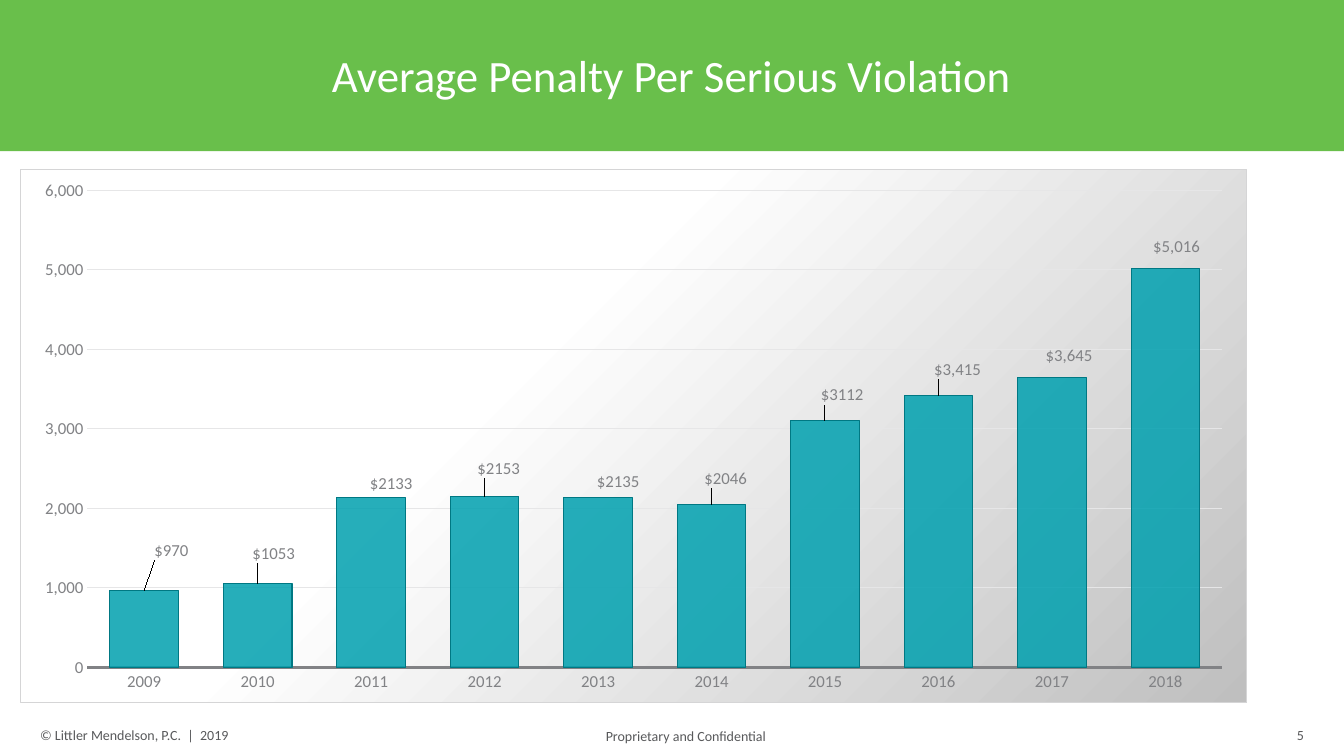
from lxml import etree
from pptx import Presentation
from pptx.chart.data import CategoryChartData
from pptx.dml.color import RGBColor
from pptx.enum.chart import XL_CHART_TYPE, XL_LABEL_POSITION, XL_TICK_MARK
from pptx.enum.shapes import MSO_SHAPE
from pptx.enum.text import MSO_ANCHOR, PP_ALIGN
from pptx.oxml import parse_xml
from pptx.oxml.ns import nsdecls, qn
from pptx.util import Inches, Pt

COLUMN = XL_CHART_TYPE.COLUMN_CLUSTERED
OUTSIDE = XL_LABEL_POSITION.OUTSIDE_END
NO_TICK = XL_TICK_MARK.NONE
MIDDLE = MSO_ANCHOR.MIDDLE
LEFT, CENTER, RIGHT = PP_ALIGN.LEFT, PP_ALIGN.CENTER, PP_ALIGN.RIGHT
FONT = "Calibri"
COLORS = {
    "band": "69BF4B", "white": "FFFFFF", "footer": "58595B", "label": "818285",
    "grid": "E6E6E7", "bar": "00A0AF", "bar_line": "007883",
    "frame": "D5D5D6", "shade": "BFBFBF",
}
# year, penalty, label, label shift right and down in inches
PENALTIES = [
    ("2009", 970, "$970", 0.27, -0.26),
    ("2010", 1053, "$1053", 0.16, -0.16),
    ("2011", 2133, "$2133", 0.2, 0),
    ("2012", 2153, "$2153", 0.14, -0.14),
    ("2013", 2135, "$2135", 0.2, -0.02),
    ("2014", 2046, "$2046", 0.14, -0.12),
    ("2015", 3112, "$3112", 0.17, -0.11),
    ("2016", 3415, "$3,415", 0.19, -0.12),
    ("2017", 3645, "$3,645", 0.17, -0.08),
    ("2018", 5016, "$5,016", 0.11, -0.08),
]


def rgb(name):
    """Return the named colour."""
    return RGBColor.from_string(COLORS[name])


def set_font(font, size, color):
    """Set typeface, size and colour."""
    font.name = FONT
    font.size = Pt(size)
    font.color.rgb = rgb(color)


def set_line(line, color, width):
    """Set line colour and width in points."""
    line.color.rgb = rgb(color)
    line.width = Pt(width)


def add_header(slide, x, y, w, h, text):
    """Draw the band and centre the title on it."""
    band = slide.shapes.add_shape(
        MSO_SHAPE.RECTANGLE, Inches(x), Inches(y), Inches(w), Inches(h))
    band.shadow.inherit = False
    band.fill.solid()
    band.fill.fore_color.rgb = rgb("band")
    band.line.fill.background()
    title = slide.shapes.title
    title._element.addprevious(band._element)
    title.left, title.top = Inches(x + 0.3), Inches(y + 0.14)
    title.width, title.height = Inches(w - 0.61), Inches(h - 0.23)
    tf = title.text_frame
    tf.vertical_anchor = MIDDLE
    p = tf.paragraphs[0]
    p.alignment = CENTER
    p.line_spacing = 0.9
    r = p.add_run()
    r.text = text
    set_font(r.font, 32, "white")


def add_footer(slide, x, y):
    """Place copyright, confidentiality note and page number."""
    parts = [
        ("© Littler Mendelson, P.C.  |  2019", 0.3, 0, 3.37, LEFT, True),
        ("Proprietary and Confidential", 5.91, 0.01, 1.81, LEFT, False),
        ("5", 9.92, 0, 3.11, RIGHT, True),
    ]
    for text, dx, dy, w, align, wrap in parts:
        box = slide.shapes.add_textbox(
            Inches(x + dx), Inches(y + dy), Inches(w), Inches(0.27))
        tf = box.text_frame
        tf.word_wrap = wrap
        tf.vertical_anchor = MIDDLE
        p = tf.paragraphs[0]
        p.alignment = align
        r = p.add_run()
        r.text = text
        set_font(r.font, 10, "footer")


def fill_chart_area(chart):
    """Give the chart area its diagonal gradient and frame."""
    stops = "".join(
        f'<a:gs pos="{pos * 1000}"><a:srgbClr val="{COLORS[c]}"/></a:gs>'
        for pos, c in [(0, "white"), (39, "white"), (100, "shade")])
    chart._chartSpace.find(qn("c:chart")).addnext(parse_xml(
        f'<c:spPr {nsdecls("c", "a")}><a:gradFill rotWithShape="1">'
        f'<a:gsLst>{stops}</a:gsLst><a:lin ang="2700000" scaled="0"/></a:gradFill>'
        f'<a:ln w="{Pt(0.75)}"><a:solidFill><a:srgbClr val="{COLORS["frame"]}"/>'
        '</a:solidFill></a:ln></c:spPr>'))


def format_axes(chart):
    """Style both axes and the gridlines."""
    for axis in (chart.category_axis, chart.value_axis):
        axis.major_tick_mark = axis.minor_tick_mark = NO_TICK
        set_font(axis.tick_labels.font, 12, "label")
    set_line(chart.category_axis.format.line, "label", 1.5)
    values = chart.value_axis
    values.minimum_scale, values.maximum_scale = 0, 6000
    values.major_unit = 1000
    values.tick_labels.number_format = "#,##0"
    values.tick_labels.number_format_is_linked = False
    values.format.line.fill.background()
    set_line(values.major_gridlines.format.line, "grid", 0.75)


def label_bars(series, w, h):
    """Add each bar's label, shifted within a chart of w by h inches."""
    for i, (_, _, text, dx, dy) in enumerate(PENALTIES):
        label = series.points[i].data_label
        p = label.text_frame.paragraphs[0]
        r = p.add_run()
        r.text = text
        set_font(r.font, 12, "label")
        label.position = OUTSIDE
        layout = parse_xml(
            f'<c:layout {nsdecls("c")}><c:manualLayout><c:x val="{dx / w:.4f}"/>'
            f'<c:y val="{dy / h:.4f}"/></c:manualLayout></c:layout>')
        label._get_or_add_dLbl().find(qn("c:idx")).addnext(layout)


def add_penalty_chart(slide, x, y, w, h):
    """Build the column chart of penalties by year."""
    data = CategoryChartData(number_format="General")
    data.categories = [row[0] for row in PENALTIES]
    data.add_series("Series 1", [row[1] for row in PENALTIES])
    chart = slide.shapes.add_chart(
        COLUMN, Inches(x), Inches(y), Inches(w), Inches(h), data).chart
    chart.has_legend = chart.has_title = False
    set_font(chart.font, 10, "footer")
    fill_chart_area(chart)
    format_axes(chart)
    plot = chart.plots[0]
    plot.gap_width = 65
    plot.vary_by_categories = False
    series = plot.series[0]
    fill = series.format.fill
    fill.solid()
    fill.fore_color.rgb = rgb("bar")
    color = series._element.find(qn("c:spPr")).find(".//" + qn("a:srgbClr"))
    etree.SubElement(color, qn("a:alpha")).set("val", "85000")
    set_line(series.format.line, "bar_line", 0.75)
    labels = series.data_labels
    labels.show_value = True
    set_font(labels.font, 12, "label")
    label_bars(series, w, h)


def main():
    """Build and save the slide."""
    prs = Presentation()
    prs.slide_width, prs.slide_height = Inches(13.33), Inches(7.5)
    slide = prs.slides.add_slide(prs.slide_layouts[5])
    add_header(slide, 0, 0, 13.33, 1.5, "Average Penalty Per Serious Violation")
    add_penalty_chart(slide, 0.2, 1.68, 12.17, 5.29)
    add_footer(slide, 0, 7.16)
    prs.save("out.pptx")


if __name__ == "__main__":
    main()
